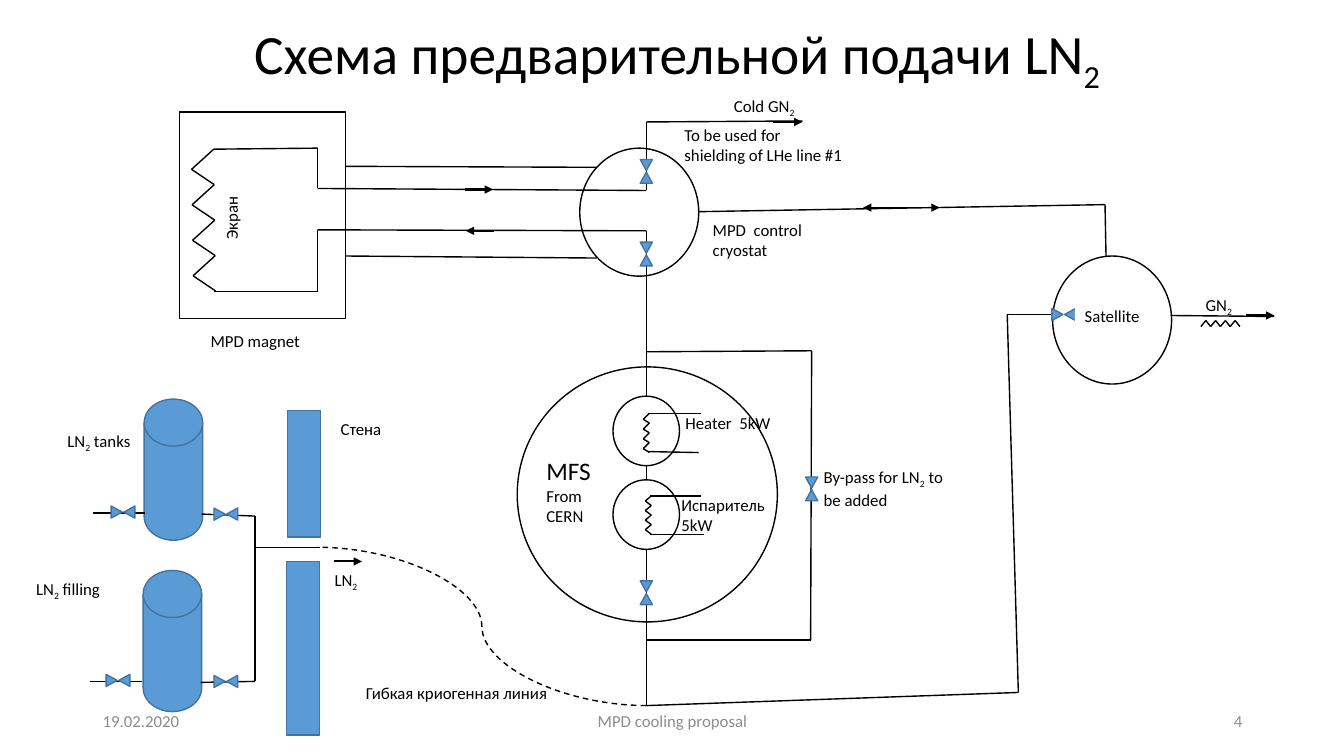
from pptx import Presentation
from pptx import util as u
from pptx.dml.color import RGBColor
from pptx.enum import dml, shapes, text
from pptx.oxml.ns import qn
from lxml import etree

BLACK, WHITE, BLUE, EDGE, GREY = "000000", "FFFFFF", "5B9BD5", "43739E", "8C8C8C"
LEFT, CENTER, RIGHT = (text.PP_ALIGN.LEFT, text.PP_ALIGN.CENTER, text.PP_ALIGN.RIGHT)
KIND = shapes.MSO_SHAPE
CIRCLE, TANK = KIND.FLOWCHART_CONNECTOR, KIND.FLOWCHART_MAGNETIC_DISK


def rgb(value):
    return RGBColor.from_string(value)


class Scheme:
    """Draws on a grid of 0.1 inch cells: x in columns, y in rows."""
    cell = 0.1
    font = "Calibri"

    def __init__(self, prs):
        self.s = prs.slides.add_slide(prs.slide_layouts[5])

    def grid(self, *cells):
        return [u.Inches(c * self.cell) for c in cells]

    def fill_paragraph(self, p, content, size, color=BLACK, align=LEFT):
        """Fill a paragraph; a ₂ becomes a lowered 2."""
        p.alignment = align
        p.font.name, p.font.size = self.font, u.Pt(size)
        p.font.color.rgb = rgb(color)
        before, mark, after = content.partition("₂")
        p.add_run().text = before
        if mark:
            r = p.add_run()
            r.text = "2"
            r.font._element.set("baseline", "-25000")
        if after:
            p.add_run().text = after

    def title(self, content, x, y, w, h):
        sp = self.s.shapes.title
        sp.left, sp.top, sp.width, sp.height = self.grid(x, y, w, h)
        tf = sp.text_frame
        tf.auto_size = text.MSO_AUTO_SIZE.NONE
        tf.vertical_anchor = text.MSO_ANCHOR.MIDDLE
        p = tf.paragraphs[0]
        p.line_spacing = 0.9
        self.fill_paragraph(p, content, 39.6, align=CENTER)

    def shape(self, kind, x, y, w, h, fill=None, line=BLACK, turn=0, parent=None):
        sp = (parent or self.s).shapes.add_shape(kind, *self.grid(x, y, w, h))
        sp.shadow.inherit = False
        sp.rotation = turn
        if fill:
            sp.fill.solid()
            sp.fill.fore_color.rgb = rgb(fill)
        else:
            sp.fill.background()
        sp.line.color.rgb = rgb(line)
        sp.line.width = u.Pt(1)

    def line(self, start, end, width=1, ends=(), curved=False, parent=None):
        kind = shapes.MSO_CONNECTOR.CURVE if curved else shapes.MSO_CONNECTOR.STRAIGHT
        cx = (parent or self.s).shapes.add_connector(kind, *self.grid(*start, *end))
        cx.line.color.rgb = rgb(BLACK)
        cx.line.width = u.Pt(width)
        if curved:
            cx.line.dash_style = dml.MSO_LINE.DASH
        for end_name in ends:
            etree.SubElement(cx._element.spPr.get_or_add_ln(), qn("a:" + end_name),
                             type="triangle")
        etree.SubElement(cx._element.spPr, qn("a:effectLst"))

    def pipe(self, *points, parent=None):
        for start, end in zip(points, points[1:]):
            self.line(start, end, parent=parent)

    def arrow(self, start, end):
        self.line(start, end, width=1.5, ends=["tailEnd"])

    def zigzag(self, x, y, pitch, tooth, teeth=4):
        points = []
        for k in range(teeth):
            px, py = x + k * pitch[0], y + k * pitch[1]
            points += [(px, py), (px + tooth[0], py + tooth[1])]
        points.append((x + teeth * pitch[0], y + teeth * pitch[1]))
        self.pipe(*points, parent=self.group())

    def group(self):
        """A group whose members are added as to a slide."""
        return self.s.shapes.add_group_shape()

    def valve(self, x, y, across=False):
        """Two triangles, tip to tip, centred on x, y."""
        group = self.group()
        w, h, gap = 1.2, 1.1, 0.63
        for side in (-1, 1):
            cx, cy = (x + side * gap, y) if across else (x, y + side * gap)
            turn = 180 + 90 * side if across else 90 - 90 * side
            self.shape(KIND.ISOSCELES_TRIANGLE, cx - w / 2, cy - h / 2, w, h,
                       BLUE, EDGE, turn, group)

    def label(self, content, x, y, w, h=3, size=12, color=BLACK, align=LEFT,
              turn=0, fill=None, middle=False):
        sp = self.s.shapes.add_textbox(*self.grid(x, y, w, h))
        sp.rotation = turn
        if fill:
            sp.fill.solid()
            sp.fill.fore_color.rgb = rgb(fill)
        tf = sp.text_frame
        tf.word_wrap = True
        if h == 3:  # one-line labels may run up to the right edge
            tf.margin_right = 0
        if middle:
            tf.vertical_anchor = text.MSO_ANCHOR.MIDDLE
        self.fill_paragraph(tf.paragraphs[0], content, size, color, align)
        return tf


def main():
    prs = Presentation()
    prs.slide_width, prs.slide_height = u.Inches(13.33), u.Inches(7.5)
    d = Scheme(prs)
    d.title("Схема предварительной подачи LN₂", 1.1, 1.9, 132.1, 7)

    # Vessels: MFS, heater, control cryostat, satellite, evaporator, magnet
    for box in [(51.3, 36.4, 25.8, 25.3), (60.8, 39.3, 6.6, 6.9), (57.5, 14.7, 11.8, 12.7),
                (104.4, 25.4, 11.8, 12.7), (60.8, 47.6, 6.6, 6.9)]:
        d.shape(CIRCLE, *box)
    d.shape(KIND.RECTANGLE, 17.8, 11.1, 16.5, 20.5)

    # Walls and tanks
    for kind, *box in [(KIND.RECTANGLE, 28.5, 40.7, 3.3, 12.6),
                       (KIND.RECTANGLE, 28.4, 55.7, 3.3, 17.2),
                       (TANK, 14.3, 39.6, 5.8, 14), (TANK, 14.2, 56.6, 5.8, 14)]:
        d.shape(kind, *box, fill=BLUE, line=EDGE)

    # Pipes
    main_x = 64.1
    for points in [
        [(34.3, 16.5), (59.2, 16.6)],
        [(34.3, 25.4), (59.2, 25.6)],
        [(21.2, 14.8), (31.5, 14.7), (31.5, 18.7), (main_x, 18.9), (main_x, 12.1), (79.6, 12)],
        [(21.2, 28.9), (31.5, 28.9), (31.5, 22.8), (main_x, 22.9), (main_x, 39.4)],
        [(main_x, 46.2), (main_x, 47.6)],
        [(main_x, 54.5), (main_x, 70), (101, 68.7), (99.9, 31.2), (104.4, 31.2)],
        [(69.3, 21), (109.6, 20.3), (109.7, 25.4)],
        [(116.1, 31.3), (126.4, 31.4)],
        [(main_x, 34.9), (80.5, 34.8), (80.4, 63.5), (main_x, 63.5)],
        [(20, 51), (25.3, 51.2), (25.3, 67.6), (19.9, 67.7)],
        [(25.3, 54.3), (31.7, 54.3)],
        [(14.4, 50.9), (9.2, 50.9)],
        [(14.1, 67.6), (8.9, 67.6)],
        [(64.3, 41), (69.5, 41)],
        [(64.3, 44.8), (69.3, 44.9)],
        [(64.5, 49.2), (69.5, 49.2)],
        [(64.5, 53), (69.8, 53)],
    ]:
        d.pipe(*points)
    d.line((main_x, 70), (31.5, 54.3), curved=True)

    # Coils: magnet screen, evaporator, heater, vent
    d.zigzag(21.2, 14.8, (0.05, 3.52), (-2.2, 2))
    d.zigzag(64.6, 49.2, (0, 0.95), (-0.6, 0.5))
    d.zigzag(64.4, 41, (0, 0.97), (-0.6, 0.6))
    d.zigzag(119.1, 32.4, (0.97, 0), (0.5, -0.6))

    # Valves
    for x, y in [(main_x, 25.2), (main_x, 17), (main_x, 58.8), (80.5, 48.5)]:
        d.valve(x, y)
    for x, y in [(105.5, 31.2), (22.4, 67.6), (22.4, 51), (11.7, 67.5), (12.2, 50.8)]:
        d.valve(x, y, across=True)

    # Flow arrows
    for x, y, run in [(123.6, 31.3, 2.8), (46.1, 18.8, 2.8), (33.1, 55.7, 2.8),
                      (49, 22.9, -2.8), (76.7, 12.1, 2.9)]:
        d.arrow((x, y), (x + run, y))
    d.line((85.6, 20.6), (93.2, 20.6), ends=["headEnd", "tailEnd"])

    # Labels
    for content, *box in [
        ("LN₂", 32.2, 56, 4.6), ("GN₂", 118.6, 28.7, 5),
        ("Испаритель 5kW", 66.6, 48.6, 13.5, 5), ("Гибкая криогенная линия", 35.3, 67.2, 22.2),
        ("Стена", 32.8, 41.1, 6.2), ("LN₂ tanks", 5.7, 42.2, 10.1),
        ("LN₂ filling", 2.6, 56.9, 9.5), ("Cold GN₂", 71.8, 9, 8.2),
        ("Heater  5kW", 67, 40.5, 10.4), ("By-pass for LN₂ to be added", 80.7, 45.8, 15.8, 5),
        ("To be used for shielding of LHe line #1", 66.9, 11.9, 17.7, 5),
    ]:
        d.label(content, *box)
    for content, turn, *box in [
        ("MPD magnet", 0, 19.9, 32.3, 12.5), ("Экран", 270, 19.8, 20.1, 6.3),
        ("MPD  control cryostat", 0, 69.7, 21.3, 13.8, 5), ("Satellite", 0, 106.6, 29.8, 7.8),
    ]:
        d.label(content, *box, turn=turn, fill=WHITE)
    mfs = d.label("MFS", 53.2, 44.7, 6.9, 8.1, size=18)
    d.fill_paragraph(mfs.add_paragraph(), "From CERN", 12)

    # Footer
    for content, x, w, align in [("19.02.2020", 9.2, 30, LEFT),
                                 ("MPD cooling proposal", 44.2, 45, CENTER),
                                 ("4", 94.2, 30, RIGHT)]:
        d.label(content, x, 69.5, w, 4, color=GREY, align=align, middle=True)

    prs.save("out.pptx")


if __name__ == "__main__":
    main()
